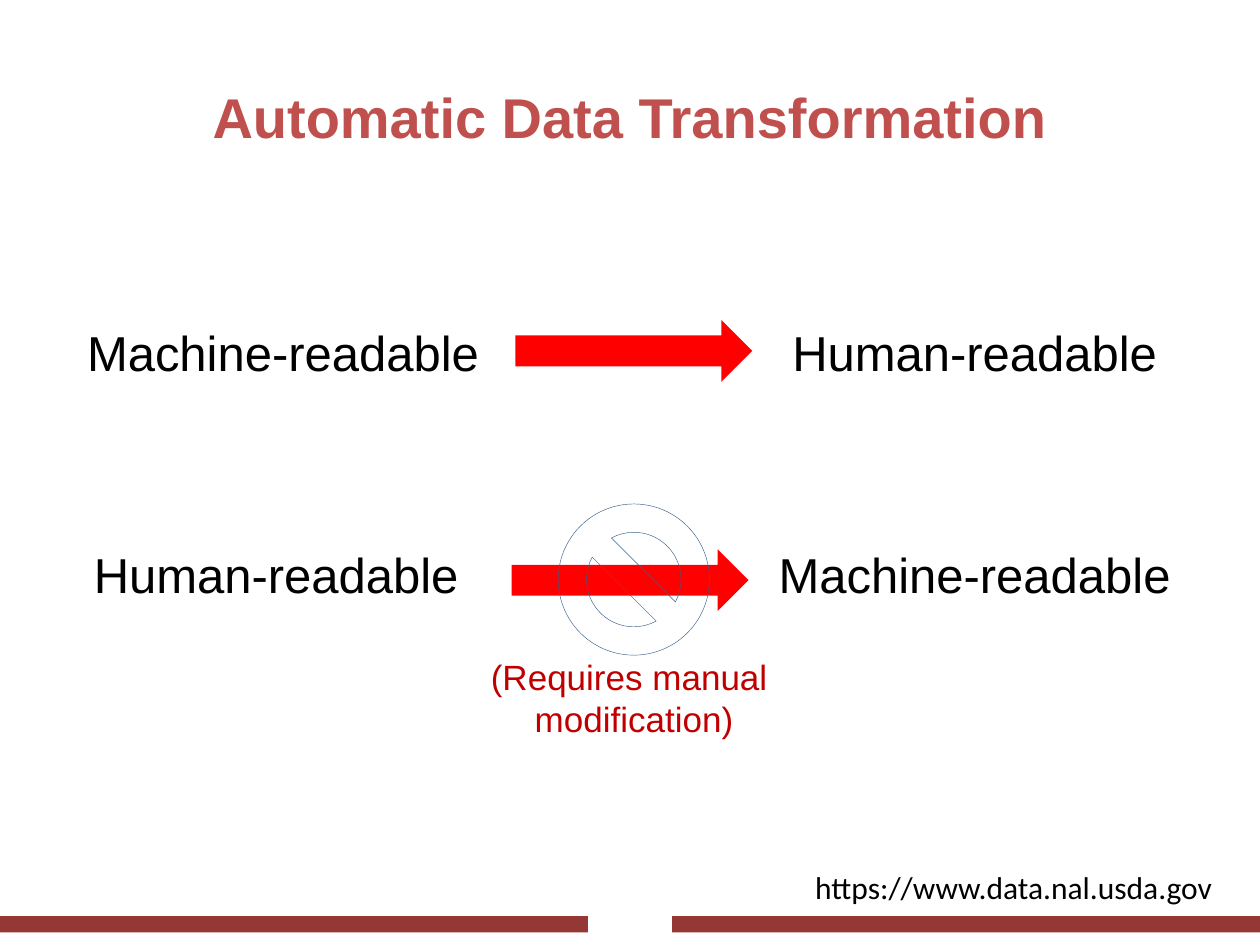
from pptx import Presentation
from pptx.dml.color import RGBColor
from pptx.enum.shapes import MSO_SHAPE as Shape
from pptx.enum.text import MSO_ANCHOR as Anchor, PP_ALIGN as Align
from pptx.util import Pt

COLORS = {"band": "953735", "arrow": "FF0000", "sign": "3A5F8C",
          "title": "C0504D", "note": "C00000", "text": "000000"}


def write(box, *lines, size=28, color="text", font="Arial", bold=False,
          anchor=Anchor.TOP, top=3.6, side=7.2, gap=0):
    frame = box.text_frame
    frame.word_wrap = True
    frame.vertical_anchor = anchor
    frame.margin_top, frame.margin_bottom = Pt(top), Pt(3.6)
    frame.margin_left = frame.margin_right = Pt(side)
    for index, line in enumerate(lines):
        para = frame.paragraphs[0] if index == 0 else frame.add_paragraph()
        para.alignment = Align.CENTER
        para.space_before = Pt(gap if index else 0)
        span = para.add_run()
        span.text = line
        span.font.name, span.font.size, span.font.bold = font, Pt(size), bold
        span.font.color.rgb = RGBColor.from_string(COLORS[color])


def draw(kind, left, top, width, height, fill=None, line=None):
    shape = page.shapes.add_shape(kind, Pt(left), Pt(top), Pt(width), Pt(height))
    shape.shadow.inherit = False
    if fill:
        shape.fill.solid()
        shape.fill.fore_color.rgb = RGBColor.from_string(COLORS[fill])
    else:
        shape.fill.background()
    if line:
        shape.line.color.rgb = RGBColor.from_string(COLORS[line])
        shape.line.width = Pt(0.25)
    else:
        shape.line.fill.background()


deck = Presentation()
deck.slide_width, deck.slide_height = Pt(720), Pt(540)
page = deck.slides.add_slide(deck.slide_layouts[5])

title = page.shapes.title
title.left, title.top, title.width, title.height = Pt(36), Pt(21.6), Pt(648), Pt(90)
write(title, "Automatic Data Transformation", size=32, color="title",
      bold=True, anchor=Anchor.MIDDLE)

for left in (0, 384):
    draw(Shape.RECTANGLE, left, 523.5, 336, 9.3, fill="band")

address = page.shapes.add_textbox(Pt(458), Pt(492), Pt(242.5), Pt(29))
write(address, "https://www.data.nal.usda.gov", size=18, font="Calibri",
      anchor=Anchor.MIDDLE, side=0)

for left, top in ((292.3, 313.9), (294.5, 182.9)):
    draw(Shape.RIGHT_ARROW, left, top, 135.4, 35.3, fill="arrow")
draw(Shape.NO_SYMBOL, 319, 288, 86.4, 86.4, line="sign")

note = page.shapes.add_textbox(Pt(202.3), Pt(371), Pt(320), Pt(55.5))
write(note, "(Requires manual ", "modification)", size=20, color="note")

columns = ((36, 251.3, ("Machine-readable", "Human-readable ")),
           (429.8, 254.2, ("Human-readable", "Machine-readable")))
for left, width, labels in columns:
    column = page.shapes.add_textbox(Pt(left), Pt(130.3), Pt(width), Pt(347))
    write(column, *labels, top=54, gap=93.5)

deck.save("out.pptx")
